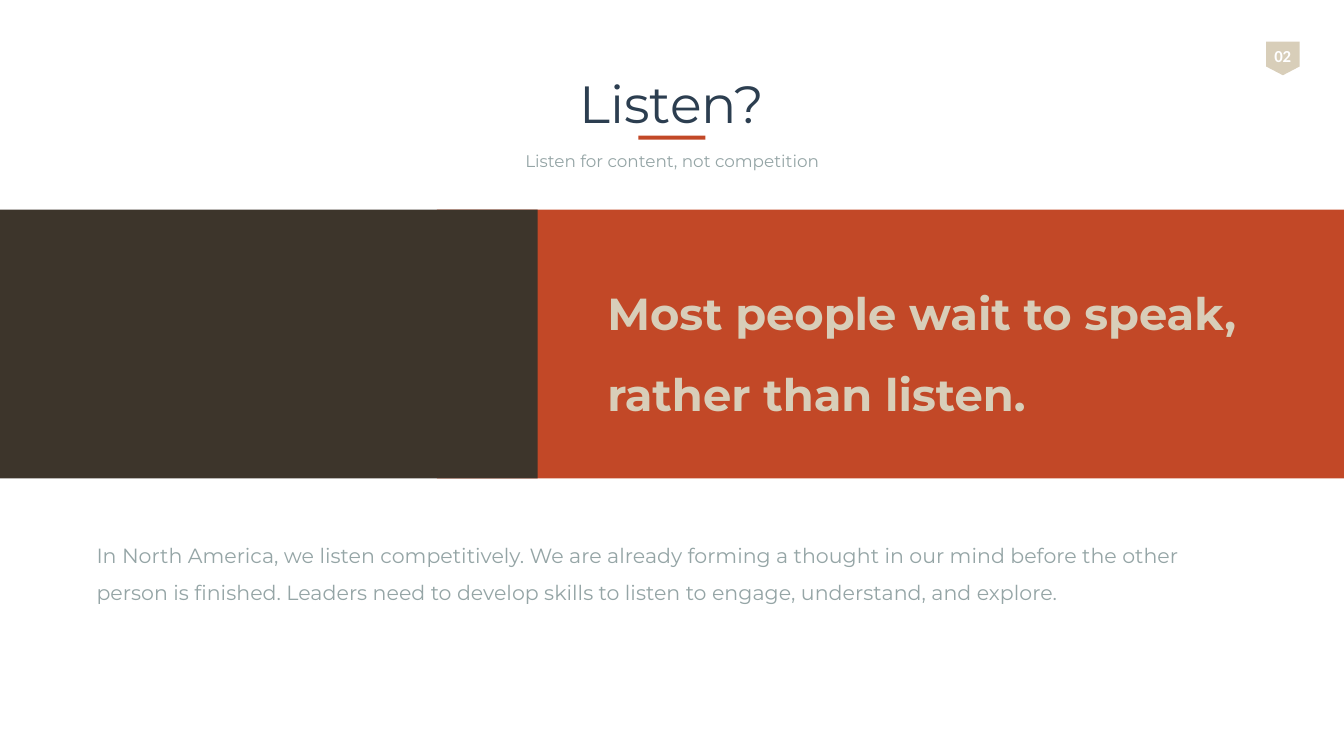
import pptx
import pptx.util
import pptx.dml.color
import pptx.enum.shapes
import pptx.enum.text

Inches = pptx.util.Inches
Pt = pptx.util.Pt
SHAPE = pptx.enum.shapes.MSO_SHAPE
ALIGN = pptx.enum.text.PP_ALIGN
ANCHOR = pptx.enum.text.MSO_ANCHOR

RUST, BROWN, SAND = "C24827", "3D352B", "D8CEB9"
NAVY, GRAY, WHITE = "2C3E50", "95A5A6", "FFFFFF"


def color(hex_string):
    return pptx.dml.color.RGBColor.from_string(hex_string)


def add_block(slide, kind, box, fill, point=None, rotation=0):
    """Add a plain filled shape; point is the depth of a pentagon's tip."""
    block = slide.shapes.add_shape(kind, *map(Inches, box))
    block.shadow.inherit = False
    block.fill.solid()
    block.fill.fore_color.rgb = color(fill)
    block.line.fill.background()
    block.rotation = rotation
    if point is not None:
        block.adjustments[0] = point


def add_text(slide, box, text, size, fill, font="Montserrat", bold=False,
             wrap=True, anchor=ANCHOR.TOP, **paragraph_format):
    """Add a one-paragraph text box."""
    label = slide.shapes.add_textbox(*map(Inches, box))
    frame = label.text_frame
    frame.word_wrap = wrap
    frame.vertical_anchor = anchor
    paragraph = frame.paragraphs[0]
    for name, value in paragraph_format.items():
        setattr(paragraph, name, value)
    run = paragraph.add_run()
    run.text = text
    font_format = {"name": font, "size": Pt(size), "bold": bold}
    for name, value in font_format.items():
        setattr(run.font, name, value)
    run.font.color.rgb = color(fill)


def main():
    # Widescreen deck, 16:9
    deck = pptx.Presentation()
    deck.slide_width = Inches(10)
    deck.slide_height = Inches(10 * 9 / 16)
    slide = deck.slides.add_slide(deck.slide_layouts[6])

    # Two-colour band
    add_block(slide, SHAPE.RECTANGLE, (3.25, 1.56, 6.75, 2), RUST)
    add_block(slide, SHAPE.PENTAGON, (0, 1.56, 4, 2), BROWN, point=0)

    # Page number badge
    add_block(slide, SHAPE.PENTAGON, (9.42, 0.31, 0.25, 0.25), SAND,
              point=0.26, rotation=90)
    add_text(slide, (9.38, 0.29, 0.33, 0.25), "02", 9, WHITE, font="Calibri",
             bold=True, wrap=False, alignment=ALIGN.CENTER)

    # Heading with underline and subtitle
    add_text(slide, (0.5, 0.48, 9, 0.57), "Listen?", 28, NAVY,
             anchor=ANCHOR.MIDDLE, alignment=ALIGN.CENTER)
    add_text(slide, (0.5, 1.07, 9, 0.25), "Listen for content, not competition",
             9, GRAY, alignment=ALIGN.CENTER, space_before=Pt(1.8))
    add_block(slide, SHAPE.RECTANGLE, (4.75, 1.01, 0.5, 0.03), RUST)

    # Quote on the band
    add_text(slide, (4.42, 1.88, 4.92, 1.36),
             "Most people wait to speak, rather than listen.", 24, SAND,
             bold=True, line_spacing=1.5, space_before=Pt(4.8))

    # Explanation below the band
    add_text(slide, (0.62, 3.9, 8.67, 0.89),
             "In North America, we listen competitively. We are already forming "
             "a thought in our mind before the other person is finished. Leaders "
             "need to develop skills to listen to engage, understand, and explore.",
             11, GRAY, line_spacing=1.5, space_before=Pt(2.2))

    deck.save("out.pptx")


if __name__ == "__main__":
    main()
